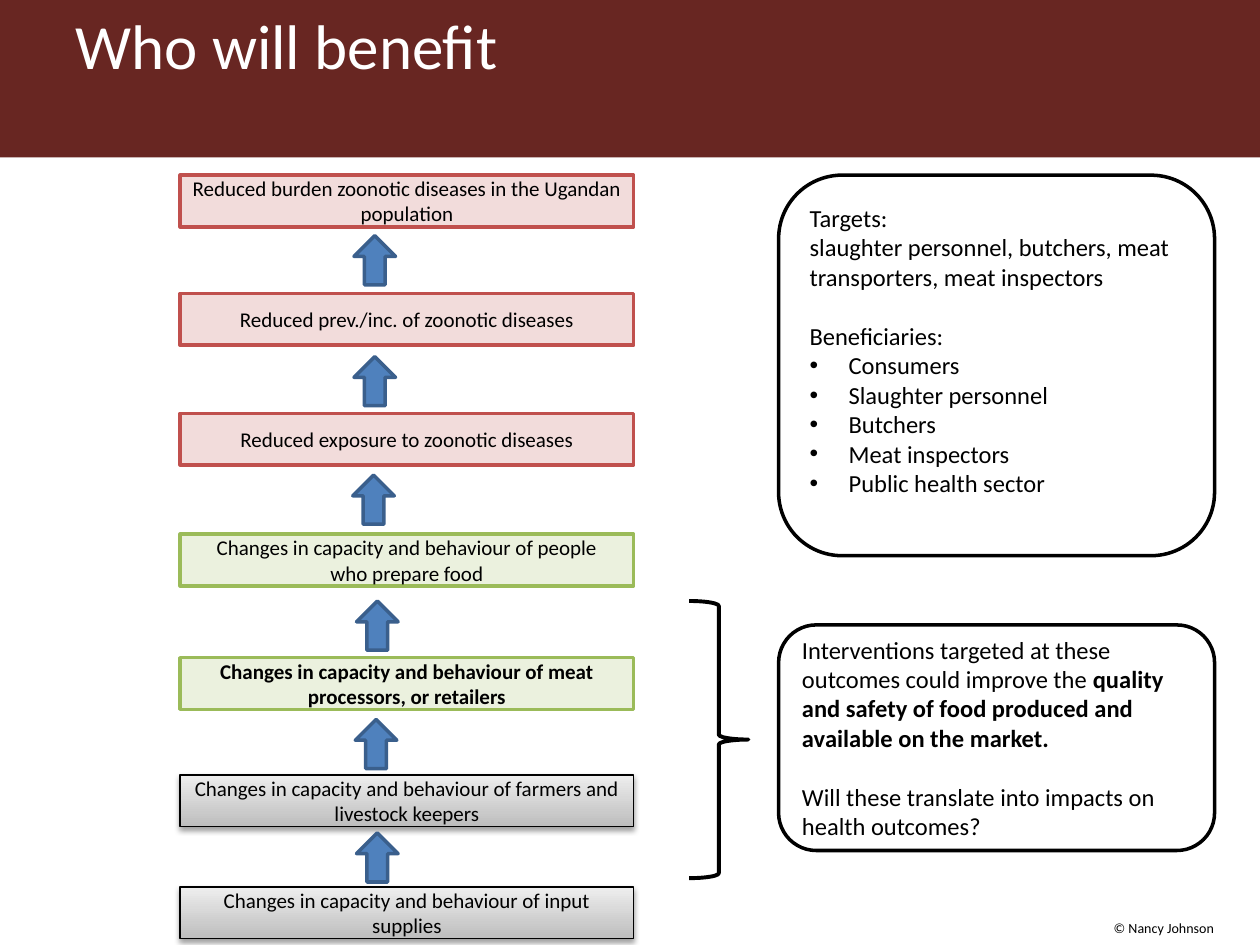
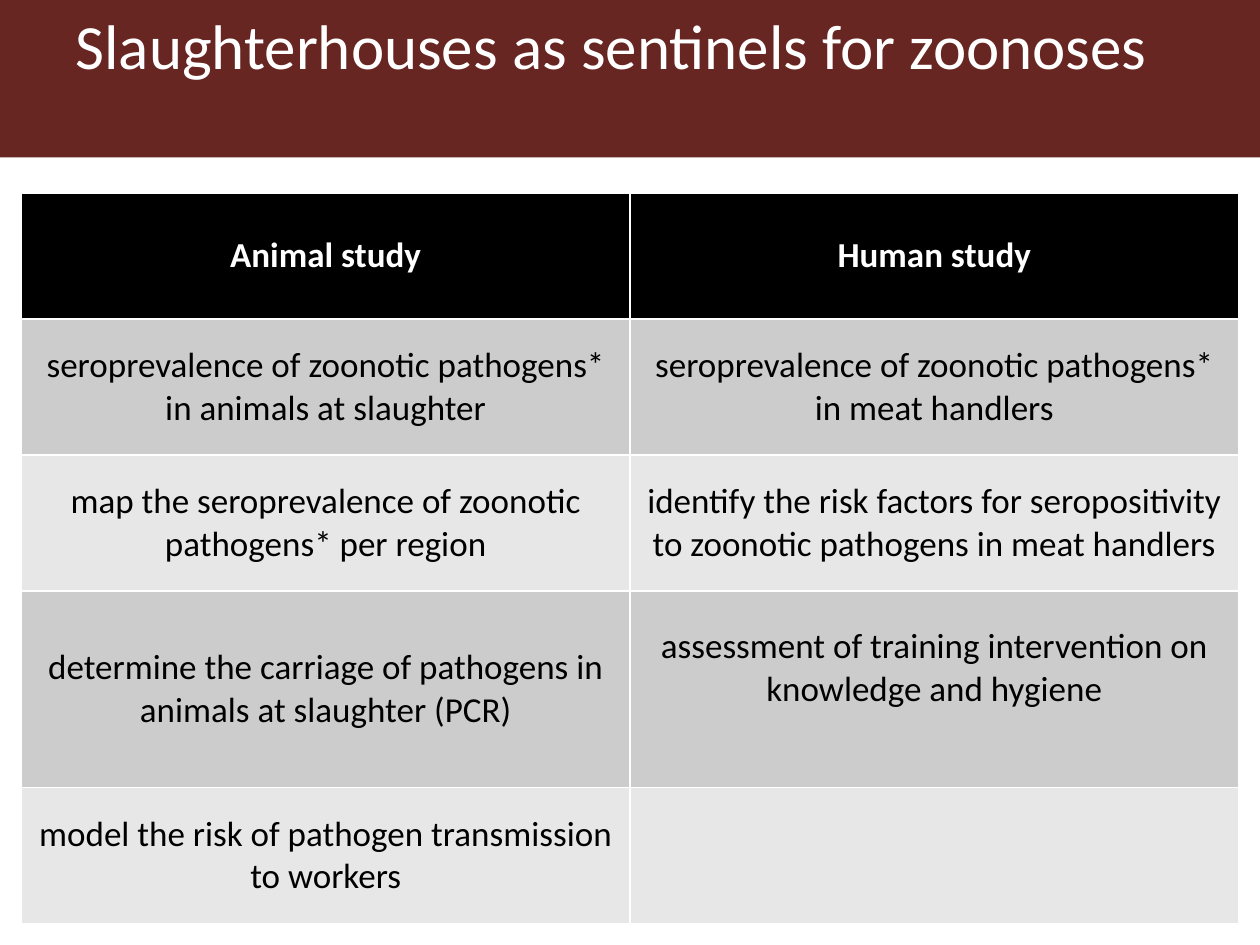
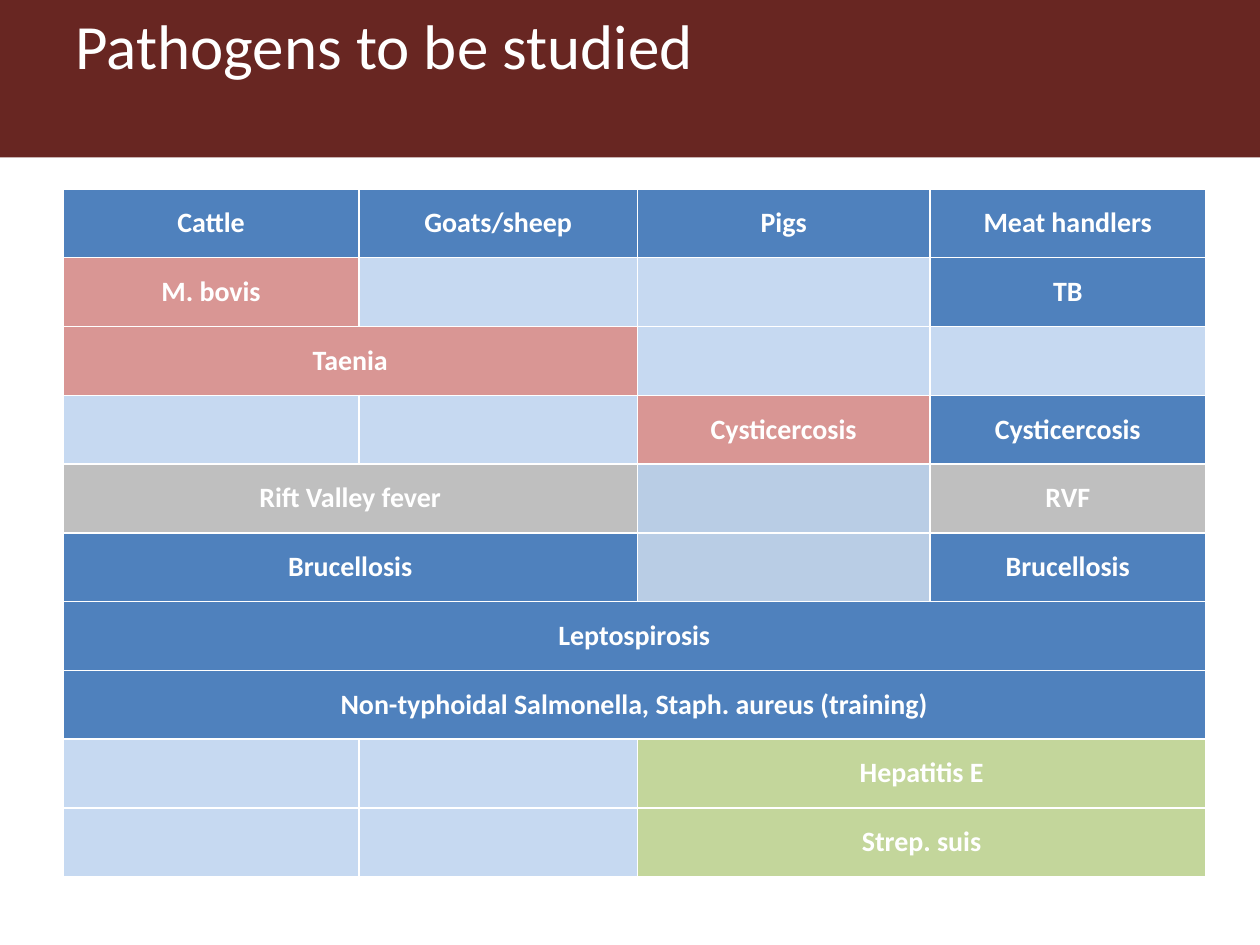
"""Build three slides on zoonoses in slaughterhouses: impact chain, study aims and pathogens."""
from lxml.etree import SubElement
from pptx import Presentation
from pptx.dml.color import RGBColor as RGB
from pptx.enum.shapes import MSO_SHAPE as SHAPE
from pptx.enum.text import MSO_ANCHOR as ANCHOR, MSO_AUTO_SIZE as AUTO, PP_ALIGN as ALIGN
from pptx.oxml.ns import qn
from pptx.util import Inches, Pt

HUE = {
    "band": "682622", "white": "FFFFFF", "black": "000000",
    "rose": "F2DCDB", "red": "C0504D", "mint": "EBF1DE", "green": "9BBB59",
    "blue": "4F81BD", "navy": "3A5F8C", "dusk": "BDBDBD", "dawn": "EEEEEE",
    "dark": "CCCCCC", "light": "E7E7E7", "pink": "D99694", "pale": "C6D9F1",
    "mist": "B9CDE5", "gray": "BFBFBF", "lime": "C3D69B",
}
HUE = {name: RGB.from_string(code) for name, code in HUE.items()}


def block(slide, kind, x, y, w, h, fill=None, line=None, width=2):
    shape = slide.shapes.add_shape(kind, Inches(x), Inches(y), Inches(w), Inches(h))
    shape.shadow.inherit = False
    if fill:
        shape.fill.solid()
        shape.fill.fore_color.rgb = HUE[fill]
    else:
        shape.fill.background()
    if line:
        shape.line.color.rgb = HUE[line]
        shape.line.width = Pt(width)
    else:
        shape.line.fill.background()
    return shape


def write(par, text, size, tone="black", align=ALIGN.CENTER, bold=False):
    par.text = text
    par.alignment = align
    par.font.name = "Calibri"
    par.font.size = Pt(size)
    par.font.bold = bold
    par.font.color.rgb = HUE[tone]


prs = Presentation()
prs.slide_width, prs.slide_height = Inches(10), Inches(7.5)
layout = prs.slide_layouts[5]

slides = []
for text, width in [("Who will benefit", 9),
                    ("Slaughterhouses as sentinels for zoonoses", 9.5),
                    ("Pathogens to be studied", 9)]:
    slide = prs.slides.add_slide(layout)
    title = slide.shapes.title
    title.left, title.top = Inches(0.5), Inches(0)
    title.width, title.height = Inches(width), Inches(1.25)
    frame = title.text_frame
    frame.auto_size = AUTO.NONE
    frame.vertical_anchor = ANCHOR.TOP
    write(frame.paragraphs[0], text, 36, "white", ALIGN.LEFT)
    slides.append(slide)
chain, study, germs = slides

band = block(chain, SHAPE.RECTANGLE, 0, 0, 10, 1.25, "band")
layout.shapes.element.insert(2, band.element)

steps = [
    (1.39, "Reduced burden zoonotic diseases in the Ugandan population", "rose", "red"),
    (2.33, "Reduced prev./inc. of zoonotic diseases", "rose", "red"),
    (3.28, "Reduced exposure to zoonotic diseases", "rose", "red"),
    (4.24, "Changes in capacity and behaviour of people\vwho prepare food", "mint", "green"),
    (5.22, "Changes in capacity and behaviour of meat processors, or retailers", "mint", "green"),
    (6.15, "Changes in capacity and behaviour of farmers and livestock keepers", None, "black"),
    (7.04, "Changes in capacity and behaviour of input supplies", None, "black"),
]
for top, text, fill, line in steps:
    step = block(chain, SHAPE.RECTANGLE, 1.43, top, 3.6, 0.41, fill, line, 2 if fill else 0.75)
    write(step.text_frame.paragraphs[0], text, 12, bold="meat" in text)
    if not fill:
        step.fill.gradient()
        step.fill.gradient_angle = 90
        for stop, tone in zip(step.fill.gradient_stops, ("dusk", "dawn")):
            stop.color.rgb = HUE[tone]
        glow = SubElement(step.element.spPr.find(qn("a:effectLst")), qn("a:outerShdw"),
                          blurRad="40000", dist="20000", dir="5400000", rotWithShape="0")
        ink = SubElement(glow, qn("a:srgbClr"), val="000000")
        SubElement(ink, qn("a:alpha"), val="38000")

for x, y in [(2.81, 1.87), (2.81, 2.83), (2.8, 3.77), (2.83, 4.77), (2.82, 5.71), (2.83, 6.61)]:
    block(chain, SHAPE.UP_ARROW, x, y, 0.33, 0.39, "blue", "navy")
block(chain, SHAPE.RIGHT_BRACE, 5.47, 4.77, 0.47, 2.2, None, "black", 2.25)

goals = block(chain, SHAPE.ROUNDED_RECTANGLE, 6.18, 1.39, 3.46, 3.02, "white", "black").text_frame
goals.margin_bottom = Inches(0.29)
lines = ["Targets:", "slaughter personnel, butchers, meat transporters, meat inspectors",
         "Beneficiaries:", "Consumers", "Slaughter personnel", "Butchers",
         "Meat inspectors", "Public health sector"]
for i, text in enumerate(lines):
    par = goals.add_paragraph() if i else goals.paragraphs[0]
    if i > 2:
        props = par._p.get_or_add_pPr()
        props.set("marL", str(Inches(0.31)))
        props.set("indent", str(-Inches(0.31)))
        SubElement(props, qn("a:buFont"), typeface="Arial")
        SubElement(props, qn("a:buChar"), char="•")
    write(par, text, 14, align=ALIGN.LEFT)
goals.paragraphs[2].space_before = Pt(17)

note = block(chain, SHAPE.ROUNDED_RECTANGLE, 6.18, 4.96, 3.46, 1.79, "white", "black").text_frame
lead, ask = note.paragraphs[0], note.add_paragraph()
write(lead, "Interventions targeted at these outcomes could improve the ", 14, align=ALIGN.LEFT)
run = lead.add_run()
run.text = "quality and safety of food produced and available on the market."
run.font.bold = True
write(ask, "Will these translate into impacts on health outcomes?", 14, align=ALIGN.LEFT)
ask.space_before = Pt(17)

credit = block(chain, SHAPE.RECTANGLE, 8.74, 7.25, 1.26, 0.24, "white").text_frame
credit.vertical_anchor = ANCHOR.TOP
write(credit.paragraphs[0], "© Nancy Johnson", 8, align=ALIGN.LEFT)

aims = [
    ("Animal study", "Human study"),
    ("seroprevalence of zoonotic pathogens* in animals at slaughter",
     "seroprevalence of zoonotic pathogens* in meat handlers"),
    ("map the seroprevalence of zoonotic pathogens* per region",
     "identify the risk factors for seropositivity to zoonotic pathogens in meat handlers"),
    ("determine the carriage of pathogens in animals at slaughter (PCR)",
     "assessment of training intervention on knowledge and hygiene"),
    ("model the risk of pathogen transmission to workers", ""),
]
grid = study.shapes.add_table(5, 2, Inches(0.17), Inches(1.53), Inches(9.66), Inches(5.8)).table
for r, (row, high) in enumerate(zip(aims, (1, 1.08, 1.08, 1.56, 1.08))):
    grid.rows[r].height = Inches(high)
    for c, text in enumerate(row):
        cell = grid.cell(r, c)
        cell.fill.solid()
        cell.fill.fore_color.rgb = HUE["black" if r == 0 else "dark" if r % 2 else "light"]
        cell.vertical_anchor = ANCHOR.MIDDLE
        if text:
            write(cell.text_frame.paragraphs[0], text, 20, "black" if r else "white", bold=r == 0)
grid.cell(3, 1).margin_bottom = Inches(0.39)

gap, blank = ("", "pale", 1), ("", "mist", 1)
finds = [
    [(name, "blue", 1) for name in ("Cattle", "Goats/sheep", "Pigs", "Meat handlers")],
    [("M. bovis", "pink", 1), gap, gap, ("TB", "blue", 1)],
    [("Taenia", "pink", 2), gap, gap],
    [gap, gap, ("Cysticercosis", "pink", 1), ("Cysticercosis", "blue", 1)],
    [("Rift Valley fever", "gray", 2), blank, ("RVF", "gray", 1)],
    [("Brucellosis", "blue", 2), blank, ("Brucellosis", "blue", 1)],
    [("Leptospirosis", "blue", 4)],
    [("Non-typhoidal Salmonella, Staph. aureus (training)", "blue", 4)],
    [gap, gap, ("Hepatitis E", "lime", 2)],
    [gap, gap, ("Strep. suis", "lime", 2)],
]
grid = germs.shapes.add_table(10, 4, Inches(0.5), Inches(1.5), Inches(9.07), Inches(5.46)).table
for col, wide in zip(grid.columns, (2.35, 2.21, 2.32, 2.19)):
    col.width = Inches(wide)
for r, row in enumerate(finds):
    c = 0
    for text, tone, span in row:
        cell = grid.cell(r, c)
        if span > 1:
            cell.merge(grid.cell(r, c + span - 1))
        cell.fill.solid()
        cell.fill.fore_color.rgb = HUE[tone]
        cell.vertical_anchor = ANCHOR.MIDDLE
        cell.margin_left = cell.margin_right = Inches(0.07)
        cell.margin_top = cell.margin_bottom = 0
        if text:
            write(cell.text_frame.paragraphs[0], text, 16, "white", bold=True)
        c += span

prs.save("out.pptx")
